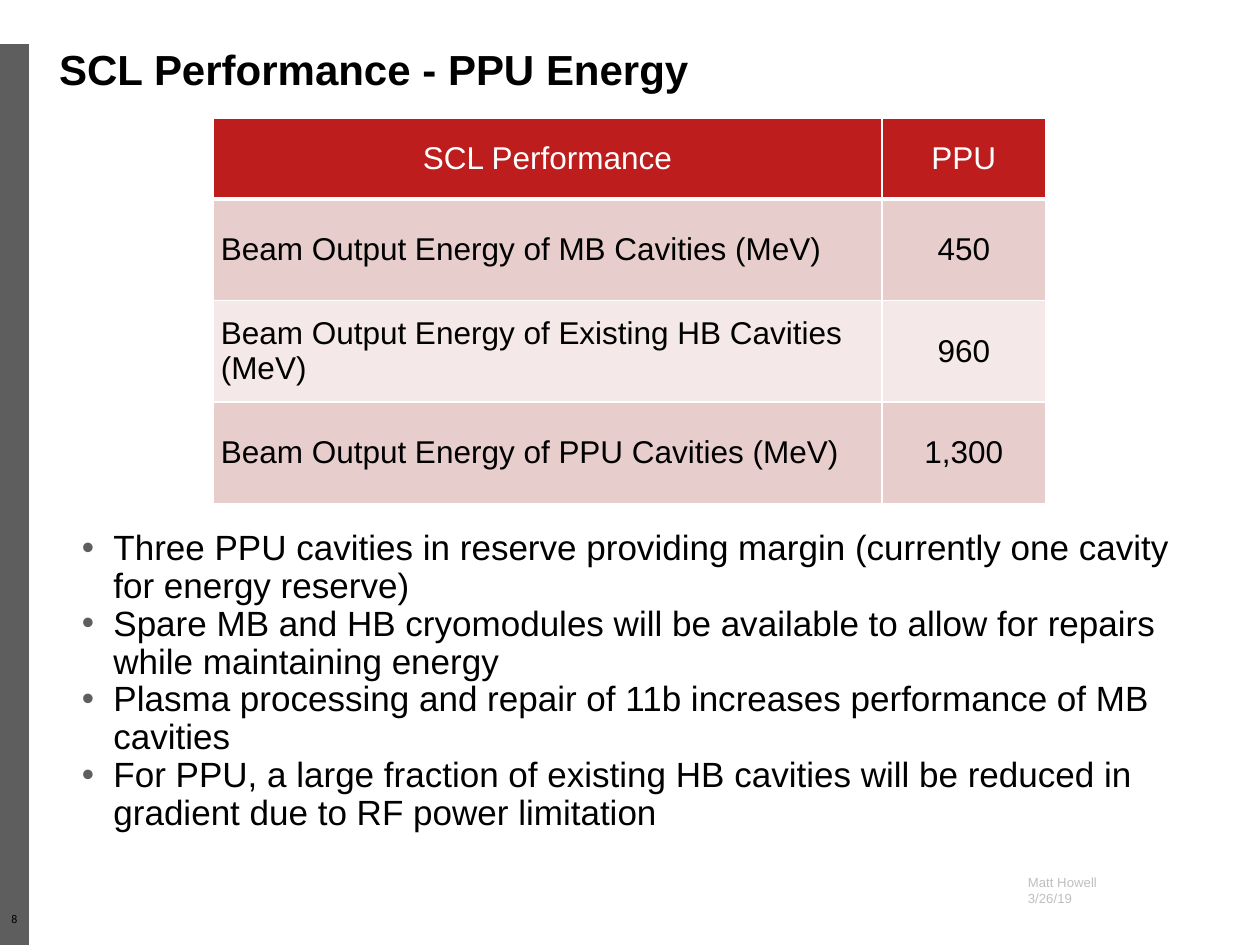
"""Build the SCL performance slide with its energy table and bullet points."""
from typing import NamedTuple

from lxml import etree
from pptx import Presentation
from pptx.dml.color import RGBColor
from pptx.enum.shapes import MSO_SHAPE
from pptx.enum.text import MSO_ANCHOR, PP_ALIGN
from pptx.oxml.ns import qn
from pptx.util import Pt

LEFT, CENTER = PP_ALIGN.LEFT, PP_ALIGN.CENTER
MIDDLE = MSO_ANCHOR.MIDDLE
RECTANGLE = MSO_SHAPE.RECTANGLE

BLACK = RGBColor(0x00, 0x00, 0x00)
WHITE = RGBColor(0xFF, 0xFF, 0xFF)
GRAY = RGBColor(0x5E, 0x5E, 0x5E)
PALE_GRAY = RGBColor(0xBF, 0xBF, 0xBF)
RED = RGBColor(0xBE, 0x1D, 0x1D)
ROSE = RGBColor(0xE8, 0xCD, 0xCD)
PALE_ROSE = RGBColor(0xF4, 0xE8, 0xE8)


class Box(NamedTuple):
    left: float
    top: float
    width: float
    height: float

    def lengths(self) -> list:
        return [Pt(value) for value in self]


class Style(NamedTuple):
    size: float
    color: RGBColor
    align: PP_ALIGN = LEFT
    spacing: float = 1.0
    font: str = "Arial"
    bold: bool = False


class EnergyRow(NamedTuple):
    label: str
    value: str
    height: float
    fill: RGBColor


ROWS = [
    EnergyRow("SCL Performance", "PPU", 46, RED),
    EnergyRow("Beam Output Energy of MB Cavities (MeV)", "450", 58, ROSE),
    EnergyRow("Beam Output Energy of Existing HB Cavities (MeV)", "960", 58, PALE_ROSE),
    EnergyRow("Beam Output Energy of PPU Cavities (MeV)", "1,300", 58, ROSE),
]
COLUMN_WIDTHS = [382.3, 93.6]
POINTS = [
    "Three PPU cavities in reserve providing margin (currently one cavity for energy reserve)",
    "Spare MB and HB cryomodules will be available to allow for repairs while maintaining energy",
    "Plasma processing and repair of 11b increases performance of MB cavities",
    "For PPU, a large fraction of existing HB cavities will be reduced in gradient "
    "due to RF power limitation",
]


def style_paragraph(paragraph, style: Style) -> None:
    paragraph.alignment = style.align
    paragraph.line_spacing = style.spacing
    font = paragraph.font
    font.name, font.size, font.bold = style.font, Pt(style.size), style.bold
    font.color.rgb = style.color


def add_bullet(paragraph) -> None:
    properties = paragraph._p.get_or_add_pPr()
    properties.set("marL", str(Pt(18)))
    properties.set("indent", str(Pt(-18)))
    color = etree.SubElement(properties, qn("a:buClr"))
    etree.SubElement(color, qn("a:srgbClr"), val=str(GRAY))
    etree.SubElement(properties, qn("a:buFont"), typeface="Arial")
    etree.SubElement(properties, qn("a:buChar"), char="•")


def set_margins(target, side: float, end: float) -> None:
    target.margin_left = target.margin_right = Pt(side)
    target.margin_top = target.margin_bottom = Pt(end)


def add_text(slide, box: Box, lines: list[str], style: Style,
             side: float = 7.2, end: float = 3.6, bulleted: bool = False) -> None:
    frame = slide.shapes.add_textbox(*box.lengths()).text_frame
    frame.word_wrap = True
    set_margins(frame, side, end)
    frame.text = "\n".join(lines)
    for paragraph in frame.paragraphs:
        if bulleted:
            add_bullet(paragraph)
        style_paragraph(paragraph, style)


def add_borders(cell, bottom: float) -> None:
    properties = cell._tc.get_or_add_tcPr()
    widths = {"a:lnL": 1, "a:lnR": 1, "a:lnT": 1, "a:lnB": bottom}
    for position, (side, width) in enumerate(widths.items()):
        line = etree.Element(qn(side), w=str(Pt(width)))
        fill = etree.SubElement(line, qn("a:solidFill"))
        etree.SubElement(fill, qn("a:srgbClr"), val=str(WHITE))
        properties.insert(position, line)


def add_energy_table(slide, box: Box) -> None:
    table = slide.shapes.add_table(len(ROWS), len(COLUMN_WIDTHS), *box.lengths()).table
    for column, width in zip(table.columns, COLUMN_WIDTHS):
        column.width = Pt(width)
    for row_index, row in enumerate(ROWS):
        table.rows[row_index].height = Pt(row.height)
        header = row_index == 0
        for column_index, text in enumerate((row.label, row.value)):
            cell = table.cell(row_index, column_index)
            cell.text = text
            cell.vertical_anchor = MIDDLE
            set_margins(cell, 4.5, 0)
            cell.fill.solid()
            cell.fill.fore_color.rgb = row.fill
            add_borders(cell, 3 if header else 1)
            align = CENTER if header or column_index else LEFT
            style_paragraph(cell.text_frame.paragraphs[0],
                            Style(18, WHITE if header else BLACK, align))


def add_side_bar(slide, box: Box) -> None:
    bar = slide.shapes.add_shape(RECTANGLE, *box.lengths())
    bar.shadow.inherit = False
    bar.fill.solid()
    bar.fill.fore_color.rgb = GRAY
    bar.line.fill.background()


def set_title(slide, box: Box, text: str) -> None:
    title = slide.shapes.title
    title.left, title.top, title.width, title.height = box.lengths()
    title.text_frame.text = text
    title.text_frame.vertical_anchor = MIDDLE
    style_paragraph(title.text_frame.paragraphs[0],
                    Style(24, BLACK, spacing=0.9, bold=True))


def main() -> None:
    presentation = Presentation()
    presentation.slide_width, presentation.slide_height = Pt(720), Pt(540)
    slide = presentation.slides.add_slide(presentation.slide_layouts[5])
    add_side_bar(slide, Box(0, 25.2, 16.5, 514.8))
    add_text(slide, Box(0, 522, 16.5, 12.2), ["8"],
             Style(6.8, BLACK, CENTER, 0.9, "Calibri"), side=0, end=0)
    add_text(slide, Box(580.3, 496.1, 120.2, 25.2), ["Matt Howell", "3/26/19"],
             Style(7.5, PALE_GRAY))
    set_title(slide, Box(26.6, 25.2, 674.6, 31.7), "SCL Performance - PPU Energy")
    add_energy_table(slide, Box(121.7, 67.7, sum(COLUMN_WIDTHS),
                                sum(row.height for row in ROWS)))
    add_text(slide, Box(41.8, 300.2, 658.8, 172.1), POINTS,
             Style(20, BLACK, spacing=0.9), side=5, end=2.9, bulleted=True)
    presentation.save("out.pptx")


if __name__ == "__main__":
    main()
